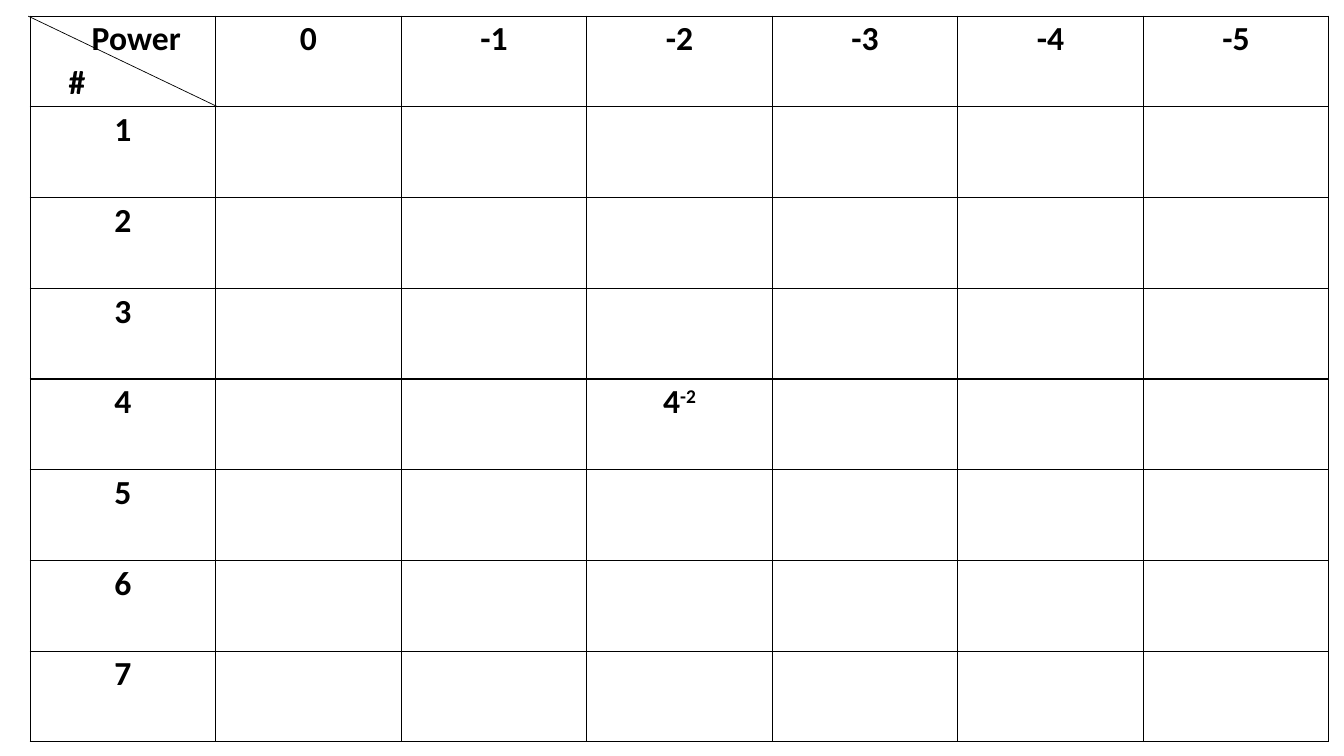
from lxml.etree import SubElement
from pptx import Presentation
from pptx.dml.color import RGBColor
from pptx.enum.shapes import MSO_CONNECTOR as Connector
from pptx.enum.text import PP_ALIGN as Align
from pptx.oxml.ns import qn
from pptx.util import Emu, Pt

EMU_PER_PX = 9144
BLACK = "000000"
FONT = "Calibri"
POWERS = ["0", "-1", "-2", "-3", "-4", "-5"]
NUMBERS = ["1", "2", "3", "4", "5", "6", "7"]
TABLE_LEFT, TABLE_TOP = 30, 16
COLUMN_WIDTH, ROW_HEIGHT = 184, 90
CELL_MARGIN = 7


def px(length):
    return Emu(length * EMU_PER_PX)


def color(hex_string):
    return RGBColor.from_string(hex_string)


def add_diagonal(slide, x1, y1, x2, y2):
    line = slide.shapes.add_connector(Connector.STRAIGHT, px(x1), px(y1), px(x2), px(y2))
    line.line.color.rgb = color(BLACK)
    line.line.width = Pt(0.5)
    SubElement(line._element.spPr, qn("a:effectLst"))


def outline_cell(cell):
    properties = cell._tc.get_or_add_tcPr()
    for side in ("lnL", "lnR", "lnT", "lnB"):
        border = SubElement(properties, qn(f"a:{side}"), w=str(Pt(1)))
        fill = SubElement(border, qn("a:solidFill"))
        SubElement(fill, qn("a:srgbClr"), val=BLACK)
    cell.fill.background()


def format_paragraph(paragraph, alignment=Align.CENTER, indent=0):
    paragraph.alignment = alignment
    paragraph.line_spacing = 1.07
    if indent:
        paragraph._p.get_or_add_pPr().set("marL", str(px(indent)))
    for run in paragraph.runs:
        run.font.name = FONT
        run.font.size = Pt(24)
        run.font.bold = True
        run.font.color.rgb = color(BLACK)


def write_cell(cell, text, exponent=""):
    paragraph = cell.text_frame.paragraphs[0]
    paragraph.text = text
    if exponent:
        run = paragraph.add_run()
        run.text = exponent
        run.font._element.set("baseline", "30000")
    format_paragraph(paragraph)


def write_corner(cell):
    """Label the columns above the diagonal and the rows below it."""
    cell.text_frame.text = "Power\n#"
    for paragraph, indent in zip(cell.text_frame.paragraphs, (54, 31)):
        format_paragraph(paragraph, Align.LEFT, indent)


def add_grid(slide, row_count, column_count):
    frame = slide.shapes.add_table(
        row_count, column_count, px(TABLE_LEFT), px(TABLE_TOP),
        px(column_count * COLUMN_WIDTH), px(row_count * ROW_HEIGHT))
    table = frame.table
    table.first_row = table.horz_banding = False
    for cell in table.iter_cells():
        cell.margin_left = cell.margin_right = px(CELL_MARGIN)
        cell.margin_top = cell.margin_bottom = 0
        outline_cell(cell)
    return table


def main():
    presentation = Presentation()
    presentation.slide_width, presentation.slide_height = px(1333), px(750)
    slide = presentation.slides.add_slide(presentation.slide_layouts[6])

    add_diagonal(slide, 28, 16, 216, 106)
    table = add_grid(slide, len(NUMBERS) + 1, len(POWERS) + 1)
    write_corner(table.cell(0, 0))
    for column, power in enumerate(POWERS, 1):
        write_cell(table.cell(0, column), power)
    for row, number in enumerate(NUMBERS, 1):
        write_cell(table.cell(row, 0), number)
    example = table.cell(NUMBERS.index("4") + 1, POWERS.index("-2") + 1)
    write_cell(example, "4", "-2")

    presentation.save("out.pptx")


if __name__ == "__main__":
    main()
